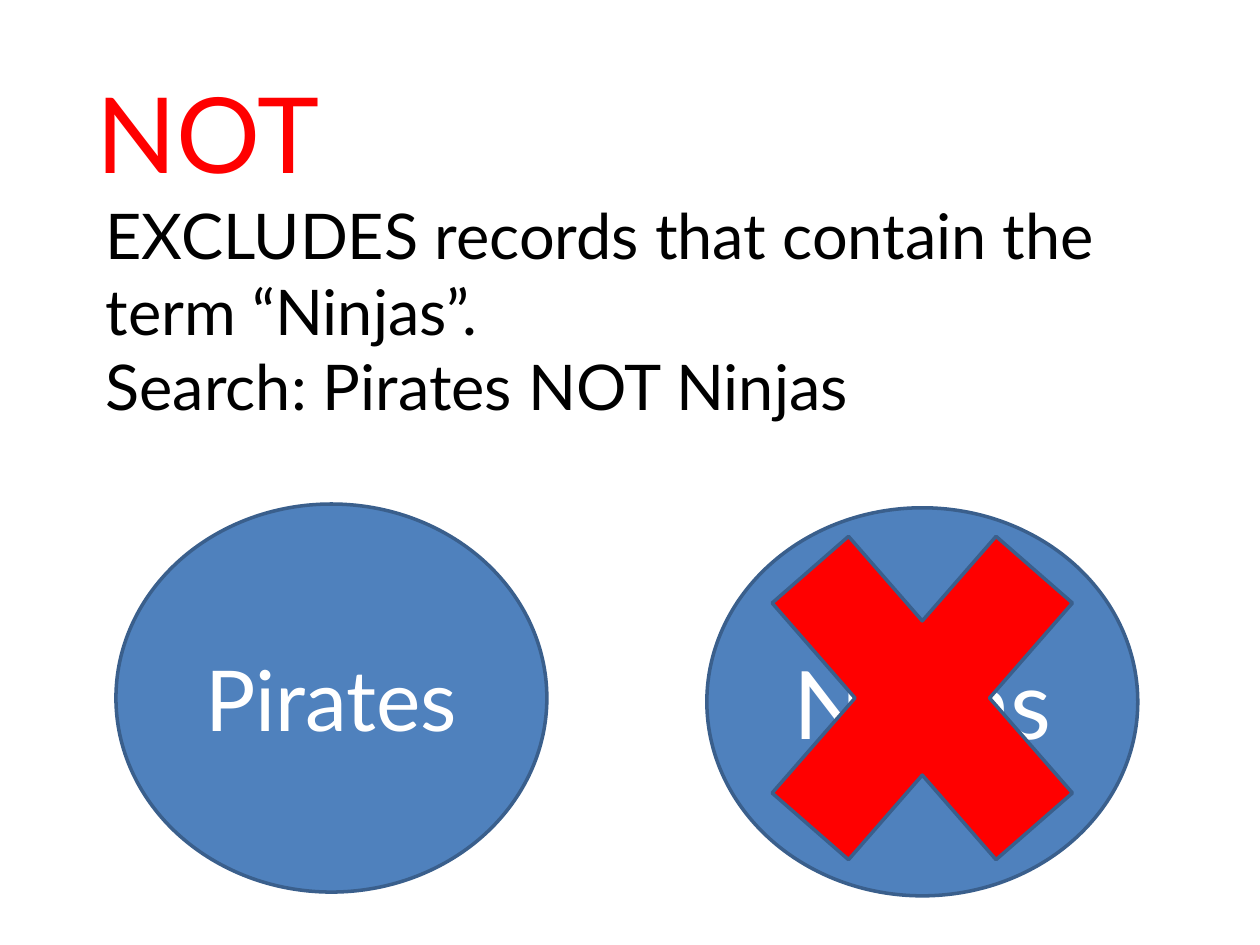
from pptx import Presentation
from pptx.dml.color import RGBColor
from pptx.enum.shapes import MSO_SHAPE as Shape
from pptx.enum.text import MSO_ANCHOR as Anchor, PP_ALIGN as Align
from pptx.util import Inches, Pt

RED = RGBColor(0xFF, 0x00, 0x00)
BLACK = RGBColor(0x00, 0x00, 0x00)
WHITE = RGBColor(0xFF, 0xFF, 0xFF)
BLUE = RGBColor(0x4F, 0x81, 0xBD)
EDGE = RGBColor(0x3A, 0x5F, 0x8C)
FONT = "Lato"
WIDTH = 3.42  # shared by both circles and the cross


def write(shape, lines, size, color, align=Align.LEFT, anchor=Anchor.MIDDLE):
    frame = shape.text_frame
    frame.word_wrap = True
    frame.vertical_anchor = anchor
    frame.text = "\n".join(lines)
    for para in frame.paragraphs:
        para.alignment = align
        para.font.name = FONT
        para.font.size = Pt(size)
        para.font.color.rgb = color


def add_text(slide, box, lines, size, color, anchor):
    shape = slide.shapes.add_textbox(*map(Inches, box))
    write(shape, lines, size, color, anchor=anchor)


def add_form(slide, kind, box, fill):
    shape = slide.shapes.add_shape(kind, *map(Inches, box))
    shape.shadow.inherit = False
    shape.fill.solid()
    shape.fill.fore_color.rgb = fill
    shape.line.color.rgb = EDGE
    shape.line.width = Pt(2)
    return shape


def add_circle(slide, left, top, label, size):
    shape = add_form(slide, Shape.OVAL, (left, top, WIDTH, 3.08), BLUE)
    write(shape, [label], size, WHITE, Align.CENTER)


def main():
    deck = Presentation()
    deck.slide_width, deck.slide_height = Inches(10), Inches(7.5)
    slide = deck.slides.add_slide(deck.slide_layouts[6])

    # Title and explanation
    add_text(slide, (0.67, 0.5, 8.67, 1.08), ["NOT"], 60, RED, Anchor.MIDDLE)
    add_text(slide, (0.74, 1.51, 8.26, 1.92),
             ["EXCLUDES records that contain the term “Ninjas”.",
              "Search: Pirates NOT Ninjas"], 36, BLACK, Anchor.TOP)

    # The kept term and the excluded term
    add_circle(slide, 0.92, 4, "Pirates", 48)
    add_circle(slide, 5.61, 4.03, "Ninjas", 54)

    # Cross over the excluded term
    add_form(slide, Shape.MATH_MULTIPLY, (5.61, 3.58, WIDTH, 3.92), RED)

    deck.save("out.pptx")


if __name__ == "__main__":
    main()
